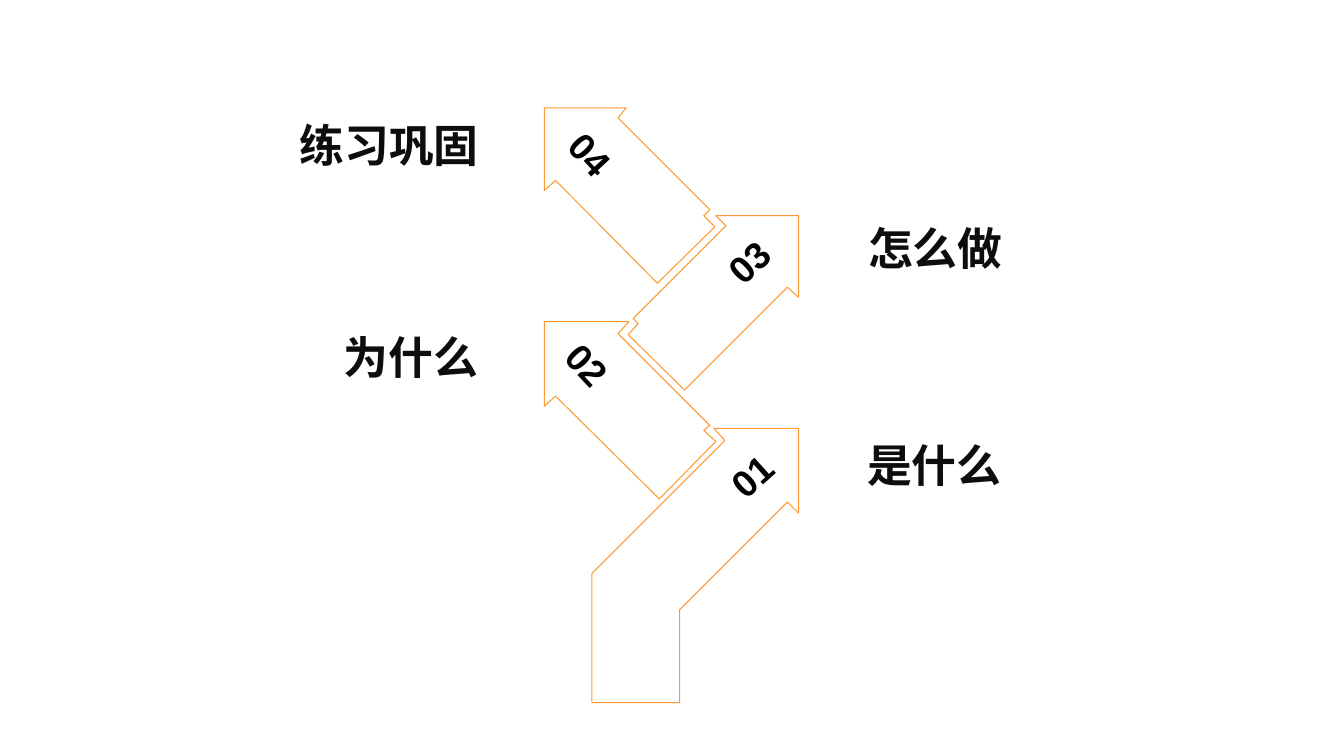
"""Builds a slide of four zigzag arrows, each with a number and a label."""
import pptx
import pptx.enum.text
import pptx.util
from pptx.dml.color import RGBColor

COLORS = {"outline": "FF9933", "number": "000000", "label": "0D0D0D"}

STEPS = [
    {
        "number": "01", "number_at": (72.4, 44.9), "angle": 318.1,
        "label": "是什么", "label_at": (86, 38.1), "label_width": 17.3,
        "outline": [(79.2, 50.9), (78.1, 49.8), (67.4, 60.5), (67.4, 69.7), (58.7, 69.7),
                    (58.7, 56.9), (71.9, 43.7), (70.8, 42.5), (79.2, 42.5)],
    },
    {
        "number": "02", "number_at": (56.2, 33.9), "angle": 47,
        "label": "为什么", "label_at": (34.1, 27.4), "label_width": 17.1,
        "outline": [(61.3, 33.1), (70.4, 42.2), (69.8, 42.7), (71, 43.8), (65.4, 49.5),
                    (55.1, 39.3), (54, 40.3), (54, 31.9), (62.4, 31.9)],
    },
    {
        "number": "03", "number_at": (72.1, 23.7), "angle": 316.6,
        "label": "怎么做", "label_at": (86.1, 16.6), "label_width": 17.8,
        "outline": [(79.2, 29.5), (78.1, 28.5), (67.9, 38.7), (62.3, 33.2), (63.3, 32.1),
                    (62.8, 31.6), (72, 22.4), (71, 21.4), (79.2, 21.4)],
    },
    {
        "number": "04", "number_at": (56.5, 13), "angle": 47,
        "label": "练习巩固", "label_at": (29.7, 6.3), "label_width": 23.8,
        "outline": [(61.3, 11.7), (70.4, 20.8), (69.8, 21.4), (70.9, 22.5), (65.2, 28.1),
                    (55.1, 17.9), (54, 18.9), (54, 10.7), (62.1, 10.7)],
    },
]


class ArrowSlide:
    font = "Arial"
    cell = pptx.util.Inches(0.1)

    def __init__(self, deck):
        self.slide = deck.slides.add_slide(deck.slide_layouts[6])

    def grid(self, *cells):
        return [pptx.util.Emu(round(cell * self.cell)) for cell in cells]

    def arrow(self, outline):
        corners = [self.grid(*corner) for corner in outline]
        builder = self.slide.shapes.build_freeform(*corners[0])
        builder.add_line_segments(corners[1:], close=True)
        arrow = builder.convert_to_shape()
        arrow.shadow.inherit = False
        arrow.fill.background()
        arrow.line.color.rgb = RGBColor.from_string(COLORS["outline"])
        arrow.line.width = pptx.util.Pt(0.75)

    def text(self, wording, at, extent, size, color, wrap):
        box = self.slide.shapes.add_textbox(*self.grid(*at, *extent))
        frame = box.text_frame
        frame.margin_left = frame.margin_right = frame.margin_top = frame.margin_bottom = 0
        frame.word_wrap = wrap
        frame.auto_size = pptx.enum.text.MSO_AUTO_SIZE.SHAPE_TO_FIT_TEXT
        frame.text = wording
        font = frame.paragraphs[0].runs[0].font
        font.name, font.size, font.bold = self.font, pptx.util.Pt(size), True
        font.color.rgb = RGBColor.from_string(COLORS[color])
        return box

    def number(self, wording, at, angle):
        number = self.text(wording, at, (4.2, 4.5), 26.6, "number", False)
        number.rotation = angle
        number.text_frame.vertical_anchor = pptx.enum.text.MSO_ANCHOR.BOTTOM
        number.text_frame.paragraphs[0].alignment = pptx.enum.text.PP_ALIGN.CENTER

    def label(self, wording, at, width):
        label = self.text(wording, at, (width, 10.8), 32, "label", True)
        label.text_frame.paragraphs[0].line_spacing = 2.0


def main():
    deck = pptx.Presentation()
    deck.slide_width = pptx.util.Inches(13.33)
    deck.slide_height = pptx.util.Inches(7.5)
    zigzag = ArrowSlide(deck)
    for step in STEPS:
        zigzag.arrow(step["outline"])
    for step in STEPS:
        zigzag.number(step["number"], step["number_at"], step["angle"])
    for step in STEPS:
        zigzag.label(step["label"], step["label_at"], step["label_width"])
    deck.save("out.pptx")


if __name__ == "__main__":
    main()
